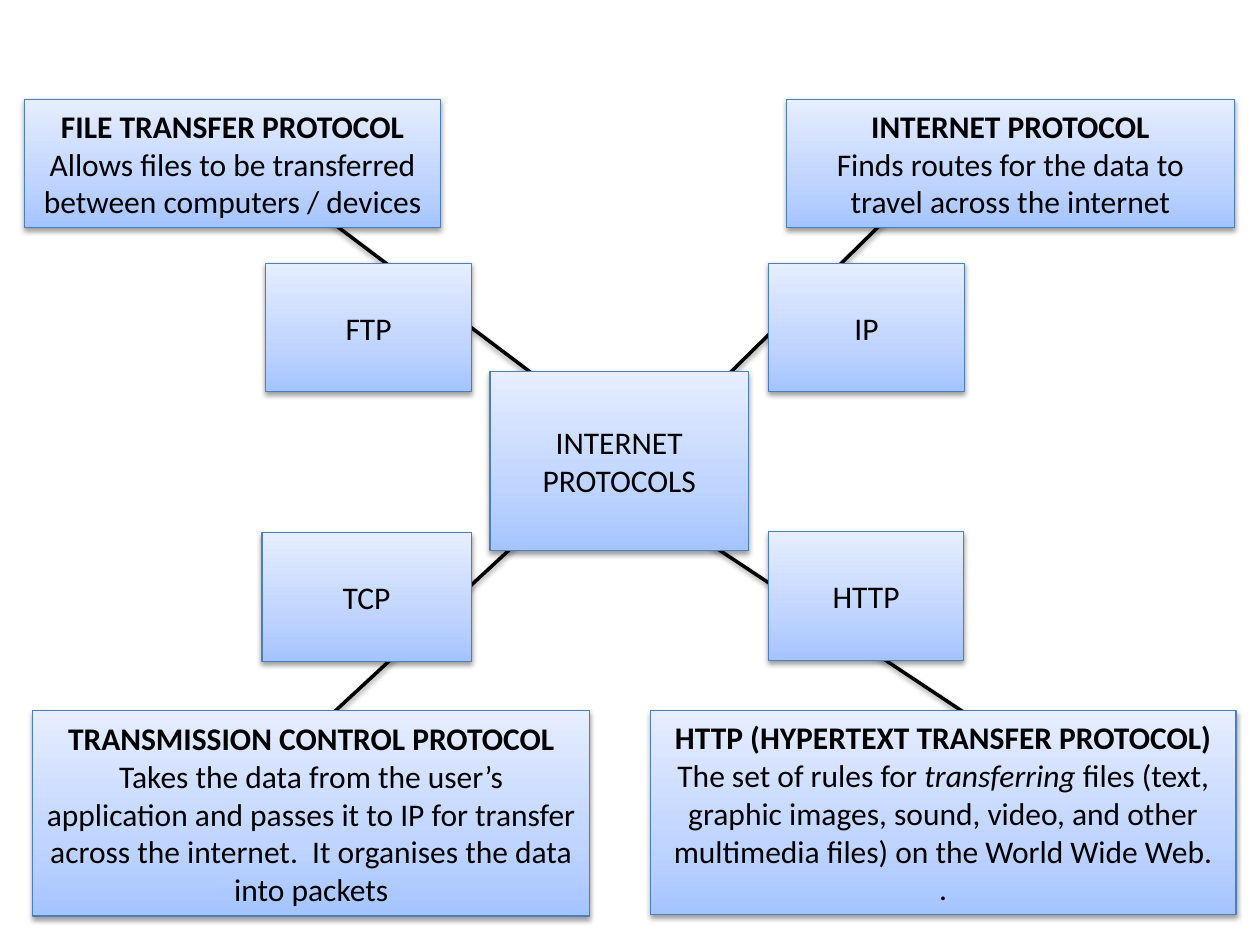
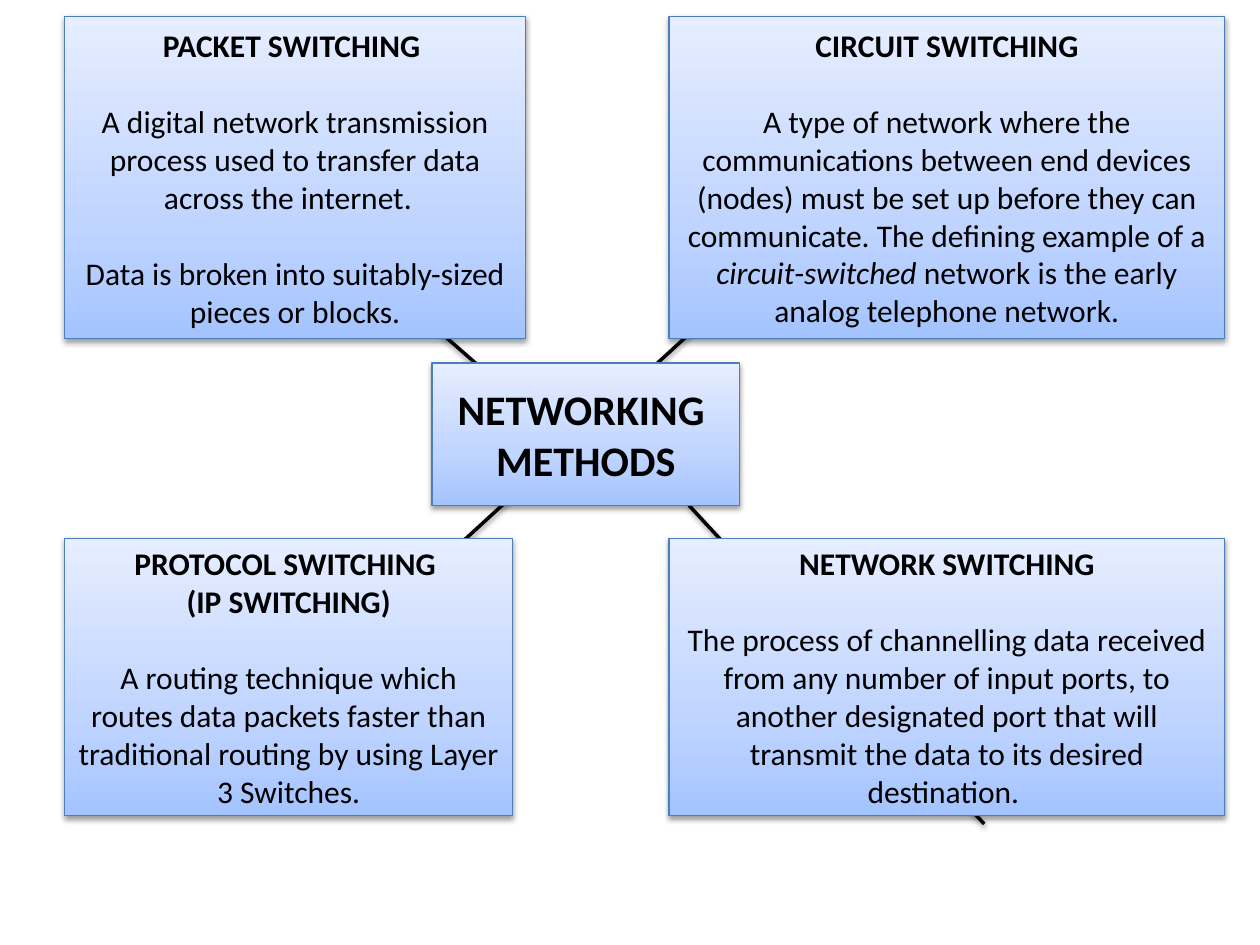
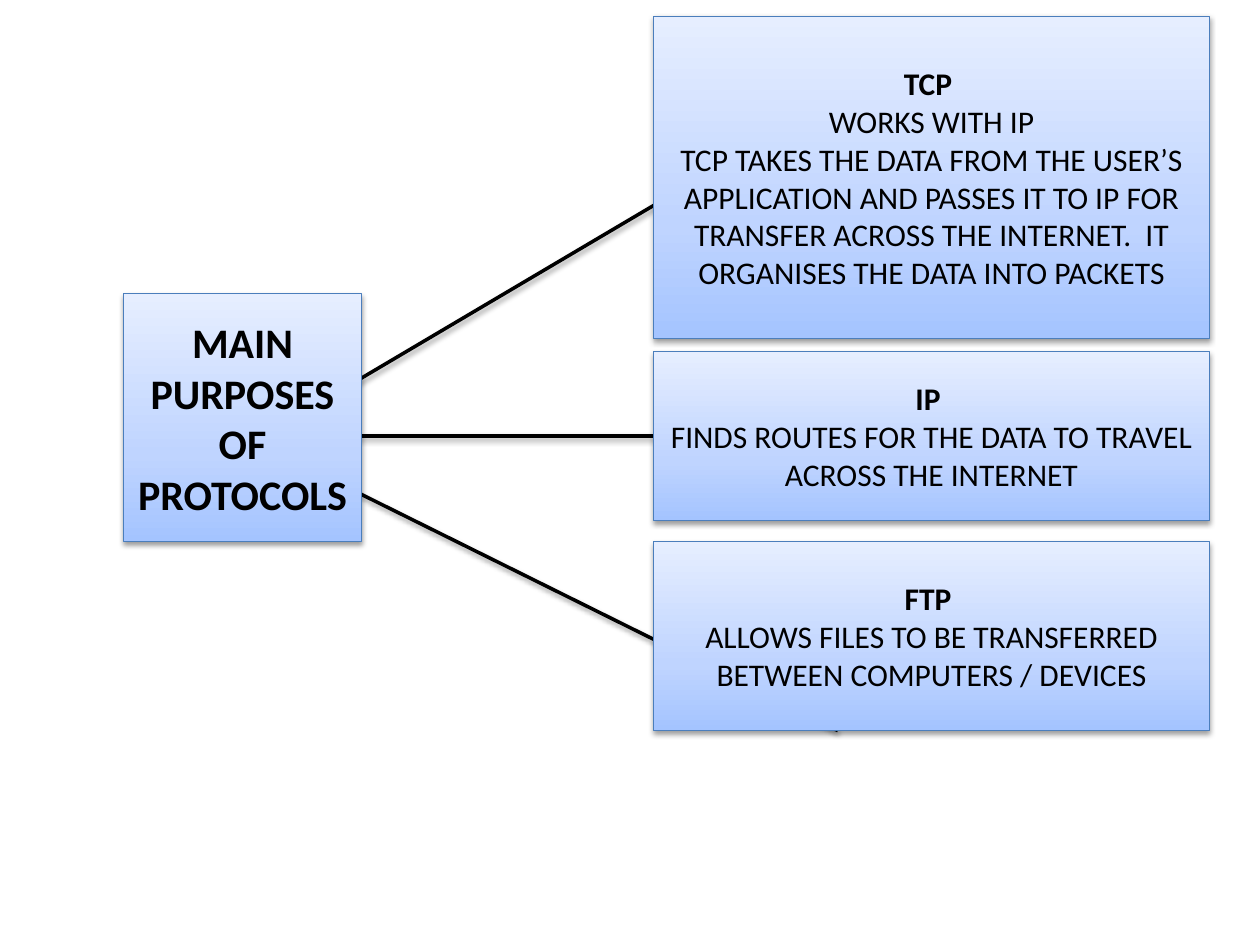
from copy import deepcopy
from dataclasses import dataclass

from lxml.etree import SubElement
from pptx import Presentation
from pptx.dml.color import RGBColor
from pptx.enum.shapes import MSO_CONNECTOR as CONNECTOR
from pptx.enum.shapes import MSO_SHAPE as SHAPE
from pptx.enum.text import MSO_ANCHOR as ANCHOR
from pptx.enum.text import PP_ALIGN as ALIGN
from pptx.oxml.ns import qn
from pptx.util import Cm, Pt

BLACK = RGBColor(0x00, 0x00, 0x00)
BORDER = RGBColor(0x4B, 0x7E, 0xBC)
GRADIENT = [
    (0, RGBColor(0xA4, 0xC4, 0xFF)),
    (0.35, RGBColor(0xBF, 0xD4, 0xFF)),
    (1, RGBColor(0xE6, 0xEE, 0xFF)),
]
FONT = "Calibri"
TEXT_SIZE = 18
HUB_SIZE = 24
LINE_GAP = 22
BLANK_LAYOUT = 6


@dataclass
class Box:
    left: float
    top: float
    width: float
    height: float

    def inner(self, left, top, width, height):
        return Box(self.left + left, self.top + top, width, height)


def add_shadow(item):
    effects = SubElement(item._element.spPr, qn("a:effectLst"))
    shadow = SubElement(effects, qn("a:outerShdw"), blurRad="40000",
                        dist="20000", dir="5400000", rotWithShape="0")
    color = SubElement(shadow, qn("a:srgbClr"), val=str(BLACK))
    SubElement(color, qn("a:alpha"), val="38000")


def add_spokes(page, box, spokes):
    for x1, y1, x2, y2 in spokes:
        spoke = page.shapes.add_connector(
            CONNECTOR.STRAIGHT, Cm(box.left + x1), Cm(box.top + y1),
            Cm(box.left + x2), Cm(box.top + y2))
        spoke.line.color.rgb = BLACK
        spoke.line.width = Pt(2)
        add_shadow(spoke)


def fill_gradient(shape):
    shape.fill.gradient()
    shape.fill.gradient_angle = 90
    stops = shape._element.spPr.find(".//" + qn("a:gsLst"))
    stops.append(deepcopy(stops[0]))
    for stop, (position, color) in zip(shape.fill.gradient_stops, GRADIENT):
        stop.position = position
        stop.color.rgb = color


def add_span(para, text, size, bold=False, italic=False):
    span = para.add_run()
    span.text = text
    span.font.name = FONT
    span.font.size = Pt(size)
    span.font.bold = bold
    span.font.italic = italic
    span.font.color.rgb = BLACK


def add_card(page, box, heads=(), body=(), gap=0, size=TEXT_SIZE):
    card = page.shapes.add_shape(SHAPE.RECTANGLE, Cm(box.left), Cm(box.top),
                                 Cm(box.width), Cm(box.height))
    fill_gradient(card)
    card.line.color.rgb = BORDER
    card.line.width = Pt(0.75)
    add_shadow(card)
    frame = card.text_frame
    frame.word_wrap = True
    frame.vertical_anchor = ANCHOR.MIDDLE
    lines = [(text, True) for text in heads] + [(text, False) for text in body]
    for index, (text, is_head) in enumerate(lines):
        para = frame.add_paragraph() if index else frame.paragraphs[0]
        para.alignment = ALIGN.CENTER
        if gap and not is_head:
            para.space_before = Pt(gap)
        parts = [(text, False)] if isinstance(text, str) else text
        for part, italic in parts:
            add_span(para, part, size, is_head, italic)


def draw_protocol_map(page, box):
    add_spokes(page, box, [
        (13.52, 6.2, 18.5, 1.3),
        (5.19, 13.32, 10.68, 8.24),
        (5.19, 1.73, 10.68, 5.87),
        (13.52, 8.77, 20.38, 13.32),
    ])
    add_card(page, box.inner(9.38, 5.49, 5.21, 3.61),
             body=["INTERNET", "PROTOCOLS"])
    for name, left, top, width in [
        ("FTP", 4.86, 3.31, 4.14),
        ("HTTP", 14.99, 8.72, 3.94),
        ("TCP", 4.78, 8.74, 4.22),
        ("IP", 14.99, 3.31, 3.96),
    ]:
        add_card(page, box.inner(left, top, width, 2.59), body=[name])
    add_card(page, box.inner(0, 0, 8.38, 2.59), ["FILE TRANSFER PROTOCOL"],
             ["Allows files to be transferred between computers / devices"])
    add_card(page, box.inner(12.61, 12.33, 11.81, 4.11),
             ["HTTP (HYPERTEXT TRANSFER PROTOCOL)"],
             [[("The set of rules for ", False), ("transferring", True),
               (" files (text, graphic images, sound, video, and other "
                "multimedia files) on the World Wide Web.", False)], "."])
    add_card(page, box.inner(0.16, 12.33, 11.23, 4.14),
             ["TRANSMISSION CONTROL PROTOCOL"],
             ["Takes the data from the user’s application and passes it to IP "
              "for transfer across the internet.  It organises the data into "
              "packets"])
    add_card(page, box.inner(15.35, 0, 9.04, 2.59), ["INTERNET PROTOCOL"],
             ["Finds routes for the data to travel across the internet"])


def draw_methods_map(page, box):
    right, right_width = 12.19, 11.2
    lower, upper_height, lower_height = 10.52, 6.5, 5.59
    add_spokes(page, box, [
        (5.61, 12.8, 17.5, 1.91),
        (2.79, 2.18, 9.29, 7.87),
        (12.59, 9.86, 18.54, 16.28),
    ])
    add_card(page, box.inner(7.41, 6.99, 6.2, 2.87),
             ["NETWORKING ", "METHODS"], size=HUB_SIZE)
    add_card(page, box.inner(0, 0, 9.3, upper_height), ["PACKET SWITCHING "],
             ["A digital network transmission process used to transfer data "
              "across the internet.  ",
              "Data is broken into suitably-sized pieces or blocks."], LINE_GAP)
    add_card(page, box.inner(right, lower, right_width, lower_height),
             ["NETWORK SWITCHING"],
             ["The process of channelling data received from any number of "
              "input ports, to another designated port that will transmit the "
              "data to its desired destination. "], LINE_GAP)
    add_card(page, box.inner(0, lower, 9.04, lower_height),
             ["PROTOCOL SWITCHING ", "(IP SWITCHING)"],
             ["A routing technique which routes data packets faster than "
              "traditional routing by using Layer 3 Switches."], LINE_GAP)
    add_card(page, box.inner(right, 0, right_width, upper_height),
             ["CIRCUIT SWITCHING"],
             [[("A type of network where the communications between end devices "
                "(nodes) must be set up before they can communicate. The "
                "defining example of a ", False),
               ("circuit", True), ("-", False), ("switched", True),
               (" network is the early analog telephone network.", False)]],
             LINE_GAP)


def draw_purposes_tree(page, box):
    add_spokes(page, box, [
        (2.82, 8.46, 15.8, 0.79),
        (3.81, 8.46, 17.22, 8.46),
        (3.23, 8.86, 14.4, 14.4),
    ])
    add_card(page, box.inner(0, 5.59, 4.8, 5),
             ["MAIN PURPOSES OF PROTOCOLS"], size=HUB_SIZE)
    for name, top, height, purposes in [
        ("TCP ", 0, 6.5,
         ["WORKS WITH IP",
          "TCP TAKES THE DATA FROM THE USER’S APPLICATION AND PASSES IT TO IP "
          "FOR TRANSFER ACROSS THE INTERNET.  IT ORGANISES THE DATA INTO "
          "PACKETS"]),
        ("FTP ", 10.59, 3.81,
         ["ALLOWS FILES TO BE TRANSFERRED BETWEEN COMPUTERS / DEVICES"]),
        ("IP ", 6.76, 3.4,
         ["FINDS ROUTES FOR THE DATA TO TRAVEL ACROSS THE INTERNET"]),
    ]:
        add_card(page, box.inner(10.69, top, 11.2, height), [name], purposes)


def main():
    deck = Presentation()
    deck.slide_width = Cm(25.4)
    deck.slide_height = Cm(19.05)
    for draw, box in [
        (draw_protocol_map, Box(0.5, 2, 24.4, 16.5)),
        (draw_methods_map, Box(1.3, 0.33, 23.4, 16.3)),
        (draw_purposes_tree, Box(2.49, 0.33, 21.9, 14.4)),
    ]:
        page = deck.slides.add_slide(deck.slide_layouts[BLANK_LAYOUT])
        draw(page, box)
    deck.save("out.pptx")


if __name__ == "__main__":
    main()
